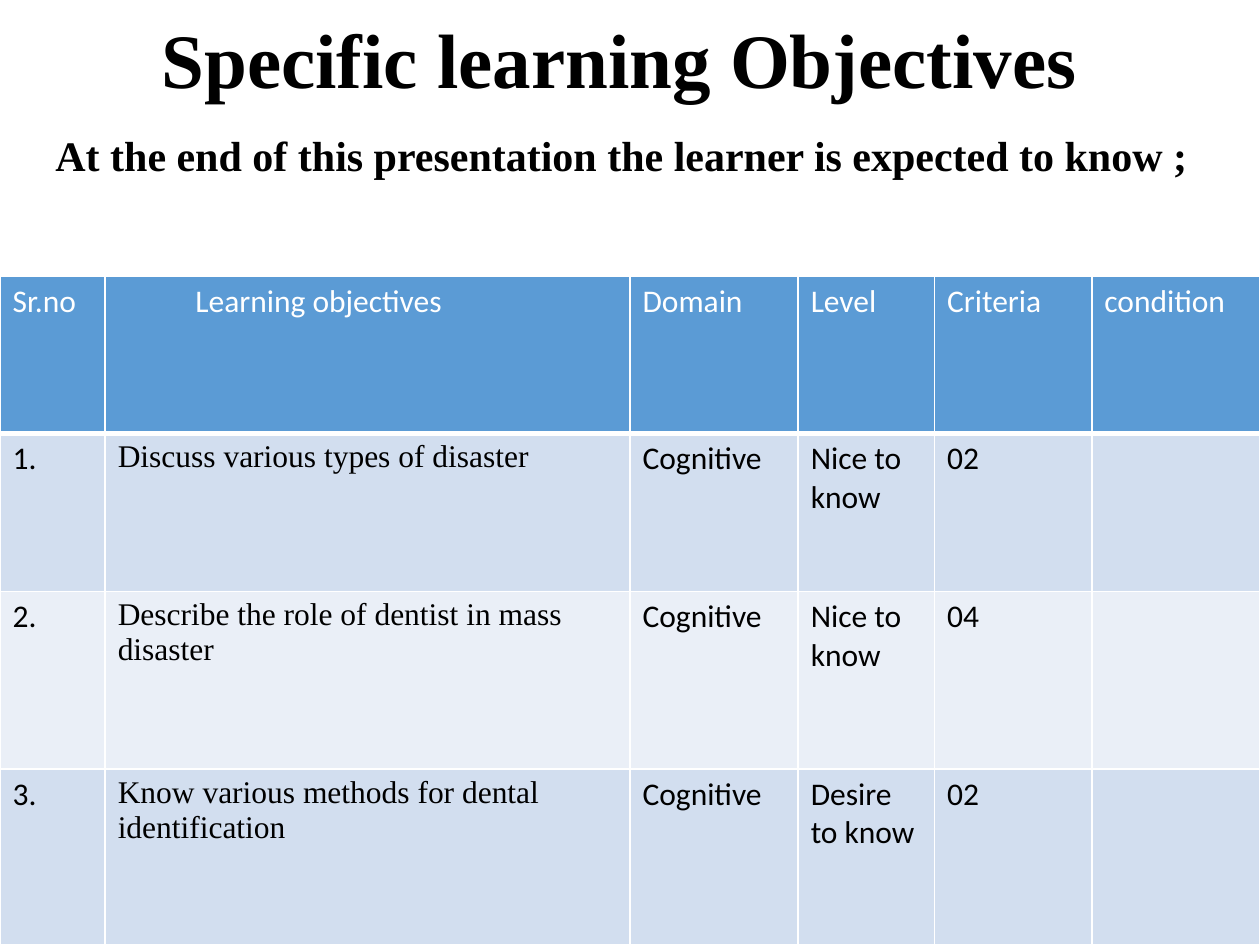
"""Build the learning objectives slide with its table of domains, levels and criteria."""
from lxml import etree
from pptx import Presentation
from pptx import util as u
from pptx.dml.color import RGBColor
from pptx.enum import text
from pptx.oxml import ns


def style(font, name, size, colour, bold=False):
    font.name, font.size, font.bold = name, u.Pt(size), bold
    font.color.rgb = RGBColor.from_string(colour)


def border(cell, side, points):
    line = etree.SubElement(cell._tc.get_or_add_tcPr(), ns.qn(f"a:ln{side}"), w=str(u.Pt(points)))
    fill = etree.SubElement(line, ns.qn("a:solidFill"))
    etree.SubElement(fill, ns.qn("a:srgbClr"), val="FFFFFF")


deck = Presentation()
deck.slide_width, deck.slide_height = u.Cm(25.4), u.Cm(19.05)
slide = deck.slides.add_slide(deck.slide_layouts[5])

title = slide.shapes.title
title.left, title.top, title.width, title.height = u.Cm(-0.18), u.Cm(-0.25), u.Cm(25.73), u.Cm(3.07)
title.text_frame.text = "Specific learning Objectives "
title.text_frame.vertical_anchor = text.MSO_ANCHOR.MIDDLE
heading = title.text_frame.paragraphs[0]
heading.alignment, heading.line_spacing = text.PP_ALIGN.CENTER, 0.9
style(heading.font, "Times New Roman", 44, "000000", True)

intro = slide.shapes.add_textbox(u.Cm(-1.07), u.Cm(2.49), u.Cm(27.2), u.Cm(1.27)).text_frame
intro.word_wrap = True
intro.auto_size = text.MSO_AUTO_SIZE.SHAPE_TO_FIT_TEXT
intro.text = "At the end of this presentation the learner is expected to know ;"
intro.paragraphs[0].alignment = text.PP_ALIGN.CENTER
style(intro.paragraphs[0].font, "Times New Roman", 24, "000000", True)

rows = [
    ("Sr.no", "Learning objectives", "Domain", "Level", "Criteria", "condition"),
    ("1.", "Discuss various types of disaster", "Cognitive", "Nice to know", "02", ""),
    ("2.", "Describe the role of dentist in mass disaster", "Cognitive", "Nice to know", "04", ""),
    ("3.", "Know various methods for dental identification", "Cognitive", "Desire to know", "02", ""),
]
row_fills = ["5B9BD5", "D2DEEF", "EAEFF7", "D2DEEF"]
row_heights = [3.18, 3.18, 3.58, 3.55]
column_widths = [2.12, 10.58, 3.39, 2.75, 3.17, 3.39]

objectives = slide.shapes.add_table(
    len(rows), len(column_widths), u.Cm(0), u.Cm(5.56), u.Cm(25.4), u.Cm(13.49)).table
for column, width in zip(objectives.columns, column_widths):
    column.width = u.Cm(width)
for r, (words, fill, height) in enumerate(zip(rows, row_fills, row_heights)):
    objectives.rows[r].height = u.Cm(height)
    for c, word in enumerate(words):
        cell = objectives.cell(r, c)
        cell.text = word
        for side in "LRTB":
            border(cell, side, 3 if (r, side) in [(0, "B"), (1, "T")] else 1)
        cell.fill.solid()
        cell.fill.fore_color.rgb = RGBColor.from_string(fill)
        face = "Times New Roman" if r and c == 1 else "Calibri"
        style(cell.text_frame.paragraphs[0].font, face, 18, "000000" if r else "FFFFFF")
objectives.cell(0, 1).margin_left = u.Cm(1.82)

deck.save("out.pptx")
